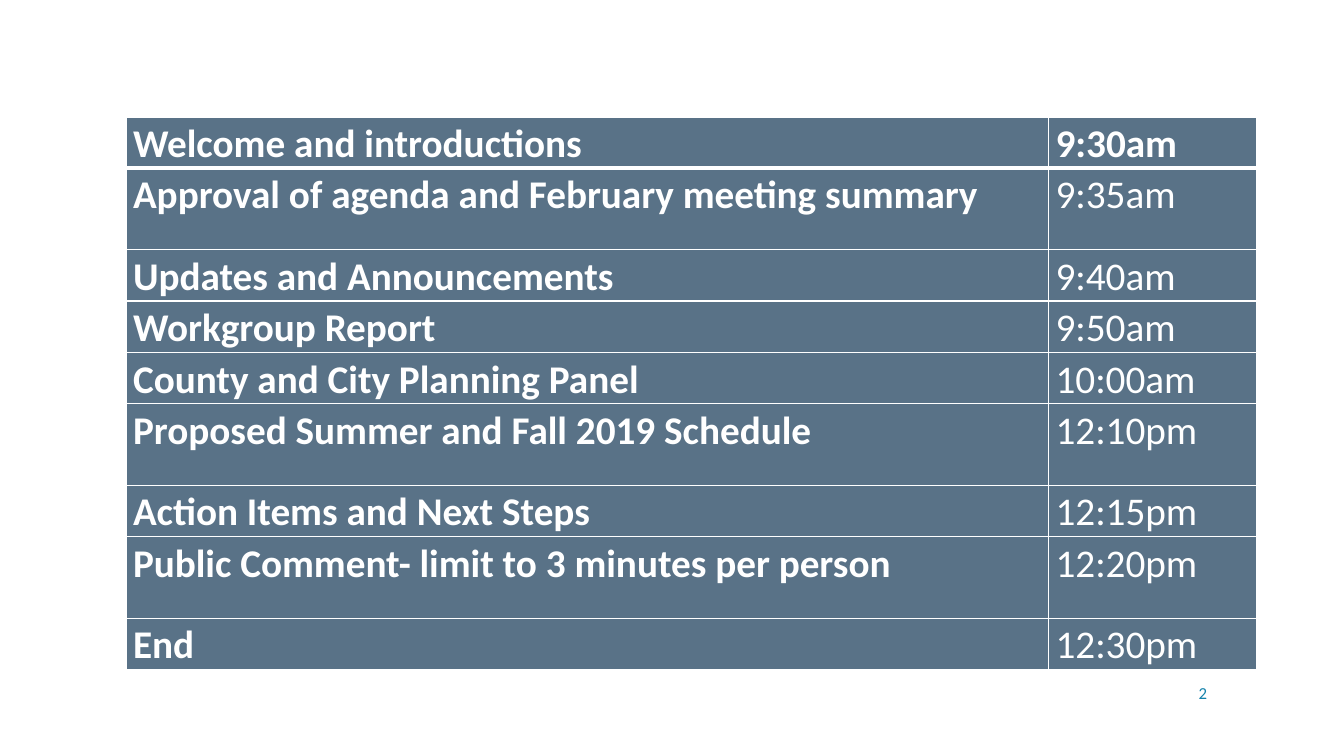
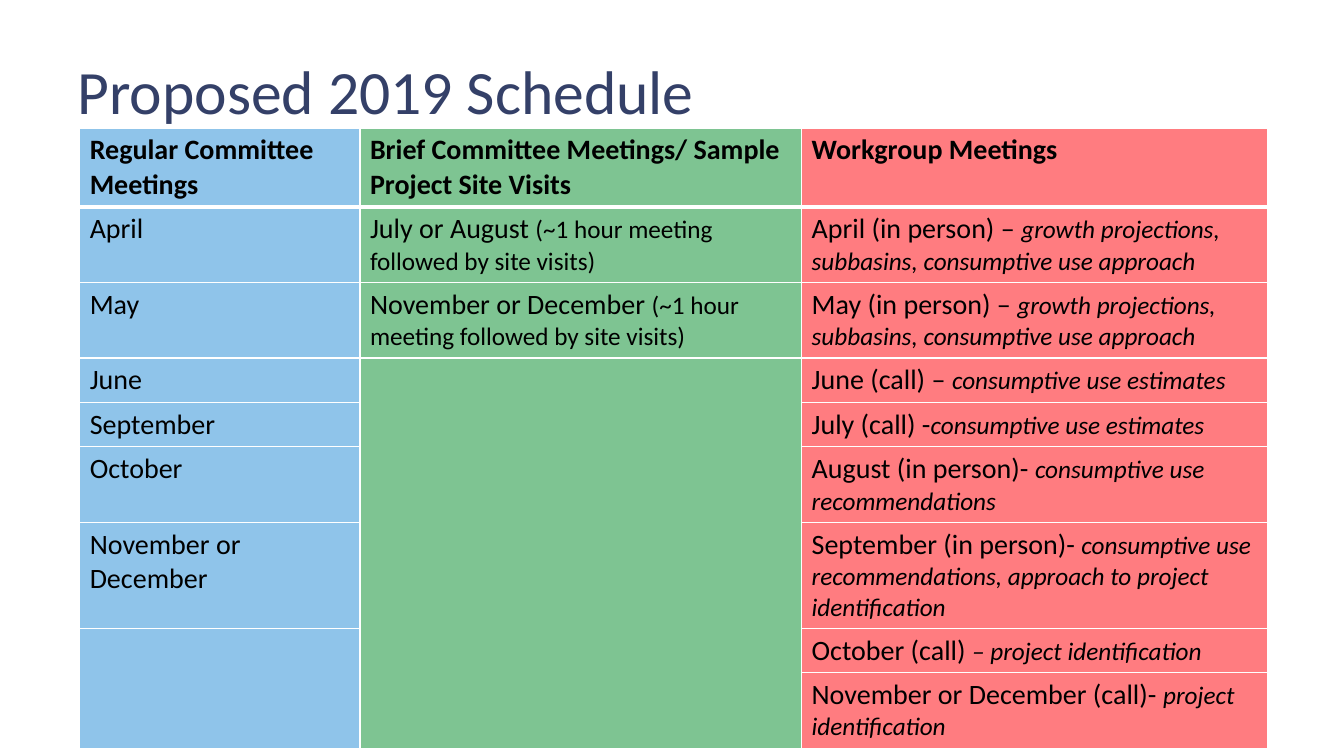
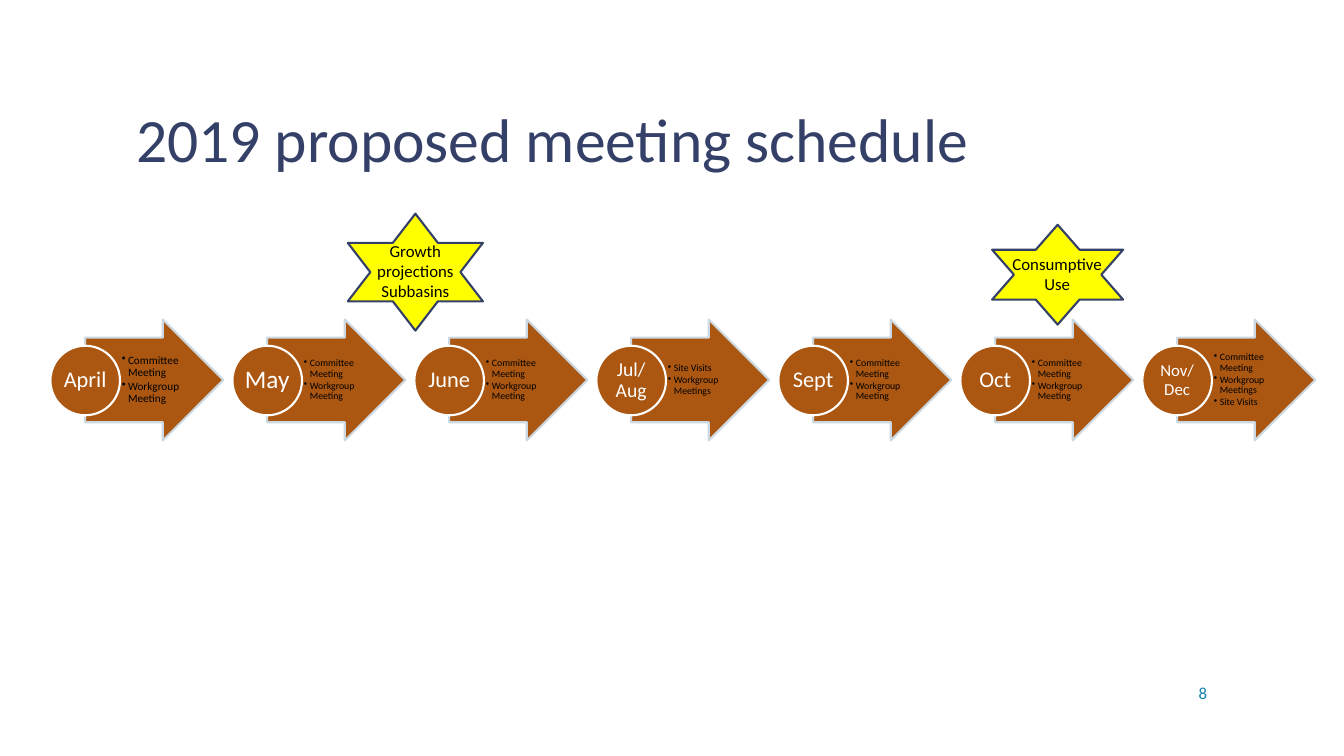
from dataclasses import dataclass

from lxml import etree
from pptx import Presentation
from pptx import util as u
from pptx.dml.color import RGBColor
from pptx.enum import shapes, text
from pptx.oxml import ns

Inches, Pt = u.Inches, u.Pt


# Theme
@dataclass(frozen=True)
class Theme:
    font: str = "Calibri"
    white: str = "FFFFFF"
    black: str = "000000"
    navy: str = "344068"
    teal: str = "1482AB"
    slate: str = "597287"
    sky: str = "8FC4EA"
    green: str = "7EC492"
    coral: str = "FF7C80"
    rust: str = "AB5711"
    mist: str = "CCD8E2"
    yellow: str = "FFFF00"
    title_size: int = 44
    agenda_size: int = 28
    body_size: int = 20
    detail_size: int = 18
    label_size: int = 12


THEME = Theme()


@dataclass(frozen=True)
class Span:
    words: str
    size: int = THEME.body_size
    bold: bool = False
    italic: bool = False
    color: str = THEME.black


@dataclass(frozen=True)
class Month:
    label: str
    label_size: int
    meetings: tuple[str, ...]
    meeting_size: int = 7


@dataclass(frozen=True)
class Milestone:
    label: str
    star: tuple[float, float, float, float]
    label_box: tuple[float, float, float, float]


# Text helpers
def write(paragraph, *spans: Span) -> None:
    for span in spans:
        run = paragraph.add_run()
        run.text = span.words
        font = run.font
        font.name, font.size = THEME.font, Pt(span.size)
        font.bold, font.italic = span.bold, span.italic
        font.color.rgb = RGBColor.from_string(span.color)


def set_margins(holder, x: float, y: float) -> None:
    holder.margin_left = holder.margin_right = Inches(x)
    holder.margin_top = holder.margin_bottom = Inches(y)


def add_label(slide, box, span: Span, align=text.PP_ALIGN.CENTER,
              anchor=text.MSO_ANCHOR.TOP) -> None:
    frame = slide.shapes.add_textbox(*map(Inches, box)).text_frame
    frame.word_wrap = True
    frame.vertical_anchor = anchor
    frame.paragraphs[0].alignment = align
    write(frame.paragraphs[0], span)


# Parts shared by the slides
def add_title(slide, words: str, left: float, top: float) -> None:
    title = slide.shapes.title
    title.left, title.top = Inches(left), Inches(top)
    title.width, title.height = Inches(10.8), Inches(1.48)
    frame = title.text_frame
    frame.auto_size = text.MSO_AUTO_SIZE.NONE
    frame.vertical_anchor = text.MSO_ANCHOR.MIDDLE
    heading = frame.paragraphs[0]
    heading.alignment = text.PP_ALIGN.LEFT
    heading.line_spacing = 0.9
    write(heading, Span(words, THEME.title_size, color=THEME.navy))


def add_page_number(slide, number: int) -> None:
    add_label(slide, (10.2, 6.67, 1.87, 0.4),
              Span(str(number), THEME.label_size, color=THEME.teal),
              text.PP_ALIGN.RIGHT, text.MSO_ANCHOR.MIDDLE)


def add_shape(slide, kind, box, fill: str, line: str):
    shape = slide.shapes.add_shape(kind, *map(Inches, box))
    shape.shadow.inherit = False
    shape.fill.solid()
    shape.fill.fore_color.rgb = RGBColor.from_string(fill)
    shape.line.color.rgb = RGBColor.from_string(line)
    shape.line.width = Pt(1.5)
    return shape


# Tables
def style_cell(cell, fill: str, row: int) -> None:
    """Fill the cell and draw white borders, thick below the first row."""
    props = cell._tc.get_or_add_tcPr()
    widths = {"lnL": 1, "lnR": 1, "lnT": 3 if row == 1 else 1,
              "lnB": 3 if row == 0 else 1}
    for side, width in widths.items():
        border = etree.SubElement(props, ns.qn(f"a:{side}"), w=str(Pt(width)))
        color = etree.SubElement(border, ns.qn("a:solidFill"))
        etree.SubElement(color, ns.qn("a:srgbClr"), val=THEME.white)
    cell.fill.solid()
    cell.fill.fore_color.rgb = RGBColor.from_string(fill)


def add_grid(slide, left: float, top: float, widths, heights, fills):
    table = slide.shapes.add_table(
        len(heights), len(widths), Inches(left), Inches(top),
        Inches(sum(widths)), Inches(sum(heights))).table
    table.horz_banding = False
    for column, width in zip(table.columns, widths):
        column.width = Inches(width)
    for r, height in enumerate(heights):
        table.rows[r].height = Inches(height)
        for c, fill in enumerate(fills):
            style_cell(table.cell(r, c), fill, r)
    return table


# Slide content
AGENDA = [
    ("Welcome and introductions", "9:30am"),
    ("Approval of agenda and February meeting summary", "9:35am"),
    ("Updates and Announcements", "9:40am"),
    ("Workgroup Report", "9:50am"),
    ("County and City Planning Panel", "10:00am"),
    ("Proposed Summer and Fall 2019 Schedule", "12:10pm"),
    ("Action Items and Next Steps", "12:15pm"),
    ("Public Comment- limit to 3 minutes per person", "12:20pm"),
    ("End", "12:30pm"),
]
TALL_AGENDA_ROWS = (1, 5, 7)

SCHEDULE_HEADS = ("Regular Committee Meetings",
                  "Brief Committee Meetings/ Sample Project Site Visits",
                  "Workgroup Meetings")
REGULAR = ("April", "May", "June", "September", "October",
           "November or December")
SITE_VISITS = ("July or August ", "November or December ")
VISIT_DETAIL = "(~1 hour meeting followed by site visits)"
GROWTH_TOPICS = "growth projections, subbasins, consumptive use approach"
# Each line of a topic is a paragraph of its own
WORKGROUP = (
    ("April (in person) – ", GROWTH_TOPICS),
    ("May (in person) – ", GROWTH_TOPICS),
    ("June (call) – ", "consumptive use estimates"),
    ("July (call) -", "consumptive use estimates"),
    ("August (in person)- ", "consumptive use\nrecommendations"),
    ("September (in person)- ",
     "consumptive use recommendations, approach to project identification"),
    ("October (call) ", "– project identification"),
    ("November or December (call)- ", "project identification"),
)

COMMITTEE_AND_WORKGROUP = ("Committee Meeting", "Workgroup Meeting")
MONTHS = [
    Month("April", 16, COMMITTEE_AND_WORKGROUP, 8),
    Month("May", 18, COMMITTEE_AND_WORKGROUP),
    Month("June", 16, COMMITTEE_AND_WORKGROUP),
    Month("Jul/ Aug", 14, ("Site Visits", "Workgroup Meetings")),
    Month("Sept", 16, COMMITTEE_AND_WORKGROUP),
    Month("Oct", 16, COMMITTEE_AND_WORKGROUP),
    Month("Nov/ Dec", 12,
          ("Committee Meeting", "Workgroup Meetings", "Site Visits")),
]
FIRST_MONTH_LEFT, LAST_MONTH_LEFT = 0.5, 11.33

MILESTONES = [
    Milestone("Growth projections Subbasins",
              (3.45, 2.12, 1.34, 1.16), (3.56, 2.34, 1.12, 0.64)),
    Milestone("Consumptive Use",
              (9.84, 2.23, 1.3, 0.99), (9.88, 2.47, 1.21, 0.5)),
]


# Slides
def build_agenda(slide) -> None:
    heights = [0.81 if r in TALL_AGENDA_ROWS else 0.5
               for r in range(len(AGENDA))]
    table = add_grid(slide, 1.25, 1.16, (9.15, 2.06), heights,
                     (THEME.slate, THEME.slate))
    for r, entry in enumerate(AGENDA):
        for c, words in enumerate(entry):
            cell = table.cell(r, c)
            set_margins(cell, 0.07, 0)
            line = cell.text_frame.paragraphs[0]
            line.line_spacing = 1.07
            write(line, Span(words, THEME.agenda_size,
                             bold=r == 0 or c == 0, color=THEME.white))
    add_page_number(slide, 2)


def build_schedule(slide) -> None:
    add_title(slide, "Proposed 2019 Schedule", 0.67, 0.2)
    heights = (0.78, 0.75, 0.75, 0.44, 0.44, 0.75, 1.05, 0.44, 0.75)
    table = add_grid(slide, 0.79, 1.27, (2.78, 4.38, 4.62), heights,
                     (THEME.sky, THEME.green, THEME.coral))
    table.cell(3, 1).merge(table.cell(8, 1))
    table.cell(7, 0).merge(table.cell(8, 0))

    def first_line(row: int, column: int):
        return table.cell(row, column).text_frame.paragraphs[0]

    for c, head in enumerate(SCHEDULE_HEADS):
        write(first_line(0, c), Span(head, bold=True))
    for r, month in enumerate(REGULAR, start=1):
        write(first_line(r, 0), Span(month))
    for r, month in enumerate(SITE_VISITS, start=1):
        write(first_line(r, 1), Span(month),
              Span(VISIT_DETAIL, THEME.detail_size))
    for r, (meeting, topic) in enumerate(WORKGROUP, start=1):
        lead, *rest = [Span(line, THEME.detail_size, italic=True)
                       for line in topic.split("\n")]
        write(first_line(r, 2), Span(meeting), lead)
        for span in rest:
            write(table.cell(r, 2).text_frame.add_paragraph(), span)


def add_month(slide, month: Month, left: float) -> None:
    diameter = 0.69
    arrow = add_shape(slide, shapes.MSO_SHAPE.RIGHT_ARROW,
                      (left + diameter / 2, 3.17, 1.37, 1.2),
                      THEME.rust, THEME.mist)
    arrow.adjustments[0], arrow.adjustments[1] = 0.7, 0.5

    # Bulleted meetings on the arrow
    meetings = slide.shapes.add_textbox(
        *map(Inches, (left + diameter, 3.35, 0.67, 0.84))).text_frame
    meetings.word_wrap = True
    meetings.vertical_anchor = text.MSO_ANCHOR.MIDDLE
    set_margins(meetings, 0.01, 0)
    meetings.margin_left = Inches(0.02)
    meetings.text = "\n".join(month.meetings)
    for item in meetings.paragraphs:
        props = item._p.get_or_add_pPr()
        props.set("marL", str(Inches(0.06)))
        props.set("indent", str(-Inches(0.06)))
        etree.SubElement(props, ns.qn("a:buChar"), char="•")
        item.line_spacing = 0.9
        item.space_after = Pt(0.15 * month.meeting_size)
        font = item.runs[0].font
        font.name, font.size = THEME.font, Pt(month.meeting_size)
        font.color.rgb = RGBColor.from_string(THEME.black)

    # Month name in the circle
    circle = add_shape(slide, shapes.MSO_SHAPE.OVAL,
                       (left, 3.43, diameter, diameter),
                       THEME.rust, THEME.white)
    frame = circle.text_frame
    frame.word_wrap = True
    frame.vertical_anchor = text.MSO_ANCHOR.MIDDLE
    set_margins(frame, 0.01, 0.01)
    name = frame.paragraphs[0]
    name.alignment = text.PP_ALIGN.CENTER
    name.line_spacing = 0.9
    write(name, Span(month.label, month.label_size, color=THEME.white))


def build_timeline(slide) -> None:
    add_title(slide, "2019 proposed meeting schedule", 1.25, 0.67)
    step = (LAST_MONTH_LEFT - FIRST_MONTH_LEFT) / (len(MONTHS) - 1)
    for i, month in enumerate(MONTHS):
        add_month(slide, month, FIRST_MONTH_LEFT + i * step)
    add_page_number(slide, 8)
    for milestone in MILESTONES:
        add_shape(slide, shapes.MSO_SHAPE.STAR_6_POINT, milestone.star,
                  THEME.yellow, THEME.navy)
        add_label(slide, milestone.label_box,
                  Span(milestone.label, THEME.label_size))


def main() -> None:
    deck = Presentation()
    deck.slide_width, deck.slide_height = Inches(13.33), Inches(7.5)
    title_only, blank = deck.slide_layouts[5], deck.slide_layouts[6]
    build_agenda(deck.slides.add_slide(blank))
    build_schedule(deck.slides.add_slide(title_only))
    build_timeline(deck.slides.add_slide(title_only))
    deck.save("out.pptx")


if __name__ == "__main__":
    main()
